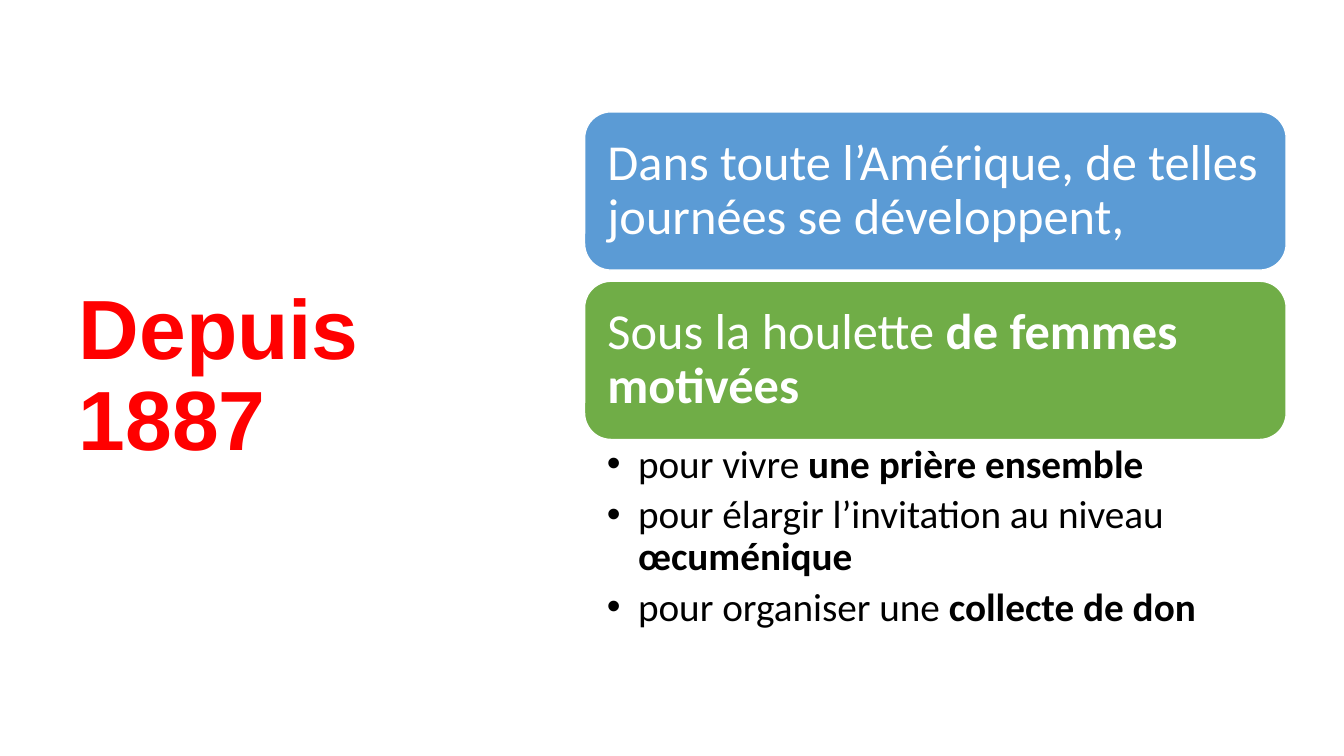
from dataclasses import dataclass

from lxml.etree import SubElement
from pptx import Presentation
from pptx.dml.color import RGBColor
from pptx.enum.shapes import MSO_SHAPE as Preset
from pptx.enum.text import MSO_ANCHOR as Anchor, MSO_AUTO_SIZE as AutoSize, PP_ALIGN as Align
from pptx.oxml.ns import qn
from pptx.shapes.autoshape import Shape
from pptx.slide import Slide
from pptx.text.text import TextFrame, _Paragraph as Paragraph
from pptx.util import Inches, Length, Pt

WIDTH, HEIGHT = Inches(13.33), Inches(7.5)


@dataclass(frozen=True)
class Theme:
    red: RGBColor = RGBColor(0xFF, 0x00, 0x00)
    blue: RGBColor = RGBColor(0x5B, 0x9B, 0xD5)
    green: RGBColor = RGBColor(0x70, 0xAD, 0x47)
    white: RGBColor = RGBColor(0xFF, 0xFF, 0xFF)
    black: RGBColor = RGBColor(0x00, 0x00, 0x00)
    heading_font: str = "Arial"
    text_font: str = "Calibri"
    heading_size: Length = Pt(60)
    banner_size: Length = Pt(36)
    goal_size: Length = Pt(28)
    line_spacing: float = 0.9


@dataclass(frozen=True)
class Phrase:
    plain: str
    strong: str = ""


@dataclass(frozen=True)
class Banner:
    phrase: Phrase
    fill: RGBColor


@dataclass(frozen=True)
class Area:
    column: float
    row: float
    columns: float
    rows: float


THEME = Theme()
HEADING_AREA = Area(5.1, 16.93, 29.55, 66)
BANNER_AREA = Area(43.5, 14.8, 52.2, 20.93)
BANNER_PITCH = 22.4
GOALS_AREA = Area(43.5, 58.13, 52.2, 27.2)

BANNERS = [
    Banner(Phrase("Dans toute l’Amérique, de telles journées se développent,"), THEME.blue),
    Banner(Phrase("Sous la houlette ", "de femmes motivées"), THEME.green),
]
GOALS = [
    Phrase("pour vivre ", "une prière ensemble"),
    Phrase("pour élargir l’invitation au niveau ", "œcuménique"),
    Phrase("pour organiser une ", "collecte de don"),
]


def bounds(area: Area) -> tuple[int, int, int, int]:
    return (
        round(WIDTH * area.column / 100),
        round(HEIGHT * area.row / 100),
        round(WIDTH * area.columns / 100),
        round(HEIGHT * area.rows / 100),
    )


def place(holder: Shape, area: Area) -> None:
    holder.left, holder.top, holder.width, holder.height = bounds(area)


def prepare(frame: TextFrame, anchor: Anchor, left: float, right: float, edge: float) -> None:
    frame.word_wrap = True
    frame.auto_size = AutoSize.NONE
    frame.vertical_anchor = anchor
    frame.margin_left, frame.margin_right = Inches(left), Inches(right)
    frame.margin_top = frame.margin_bottom = Inches(edge)


def write(
    paragraph: Paragraph, phrase: Phrase, font: str, size: Length, color: RGBColor
) -> None:
    paragraph.text = phrase.plain
    if phrase.strong:
        paragraph.add_run().text = phrase.strong
    for run in paragraph.runs:
        run.font.name = font
        run.font.size = size
        run.font.color.rgb = color
        run.font.bold = run.text == phrase.strong
    paragraph.alignment = Align.LEFT
    paragraph.line_spacing = THEME.line_spacing
    paragraph.space_before = Pt(0)


def add_bullet(paragraph: Paragraph, indent: Length) -> None:
    properties = paragraph._p.get_or_add_pPr()
    properties.set("marL", str(indent))
    properties.set("indent", str(-indent))
    SubElement(properties, qn("a:buFont"), typeface="Arial")
    SubElement(properties, qn("a:buChar"), char="•")


def fill_heading(heading: Shape) -> None:
    place(heading, HEADING_AREA)
    prepare(heading.text_frame, Anchor.MIDDLE, 0.1, 0.1, 0.05)
    write(
        heading.text_frame.paragraphs[0], Phrase("", "Depuis 1887"),
        THEME.heading_font, THEME.heading_size, THEME.red,
    )


def draw_banner(slide: Slide, banner: Banner, index: int) -> None:
    area = Area(
        BANNER_AREA.column, BANNER_AREA.row + index * BANNER_PITCH,
        BANNER_AREA.columns, BANNER_AREA.rows,
    )
    card = slide.shapes.add_shape(Preset.ROUNDED_RECTANGLE, *bounds(area))
    card.shadow.inherit = False
    card.fill.solid()
    card.fill.fore_color.rgb = banner.fill
    card.line.color.rgb = THEME.white
    card.line.width = Pt(1)
    prepare(card.text_frame, Anchor.MIDDLE, 0.15, 0.15, 0.15)
    write(
        card.text_frame.paragraphs[0], banner.phrase,
        THEME.text_font, THEME.banner_size, THEME.white,
    )


def fill_goals(goals: Shape) -> None:
    place(goals, GOALS_AREA)
    frame = goals.text_frame
    prepare(frame, Anchor.TOP, 0.22, 0.28, 0.05)
    for index, goal in enumerate(GOALS):
        paragraph = frame.add_paragraph() if index else frame.paragraphs[0]
        add_bullet(paragraph, Inches(0.31))
        write(paragraph, goal, THEME.text_font, THEME.goal_size, THEME.black)
        paragraph.space_after = Pt(5.6)


def main() -> None:
    deck = Presentation()
    deck.slide_width, deck.slide_height = WIDTH, HEIGHT
    slide = deck.slides.add_slide(deck.slide_layouts[1])
    fill_heading(slide.shapes.title)
    for index, banner in enumerate(BANNERS):
        draw_banner(slide, banner, index)
    fill_goals(slide.placeholders[1])
    deck.save("out.pptx")


if __name__ == "__main__":
    main()
